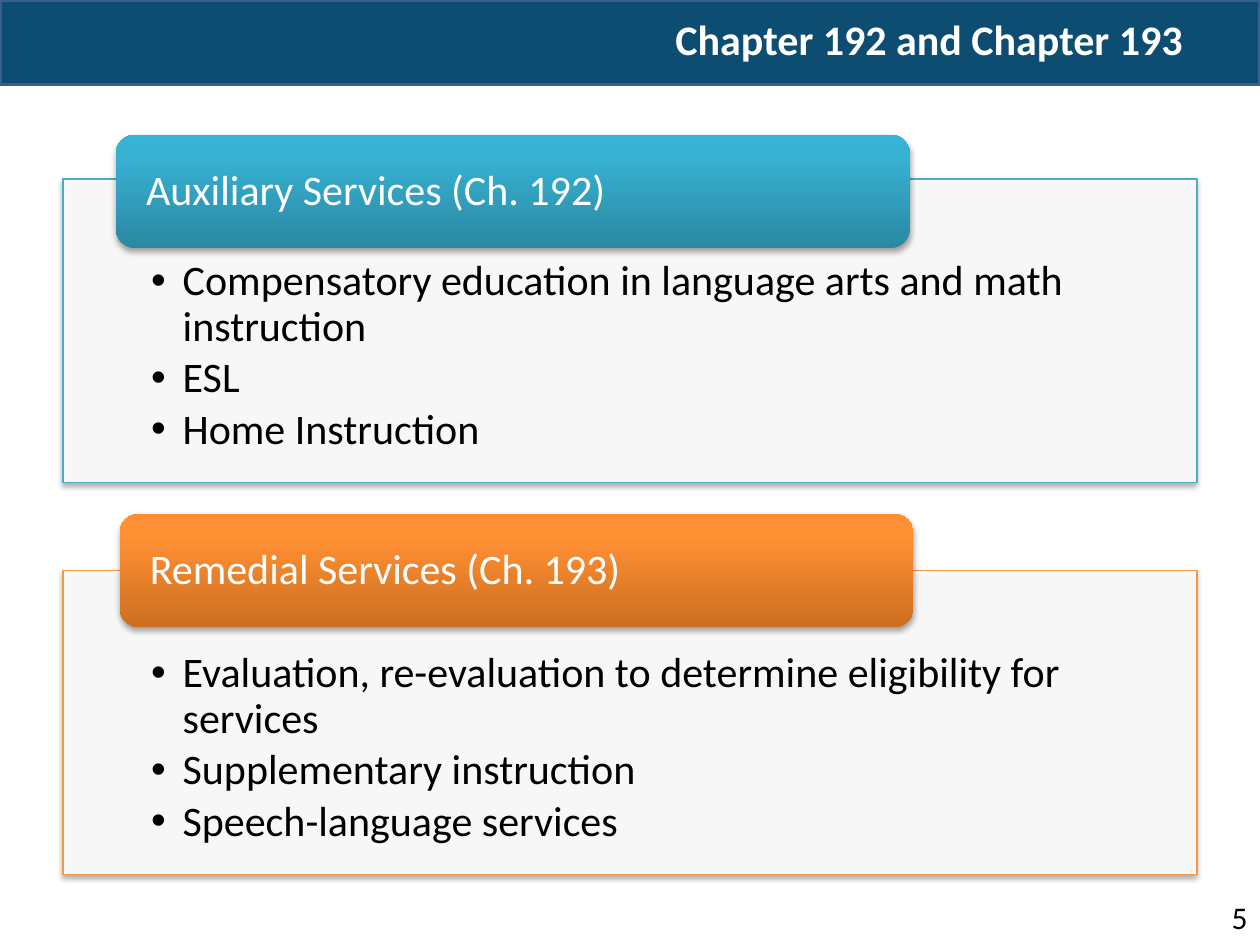
from dataclasses import dataclass

from lxml.etree import SubElement
from pptx import Presentation
from pptx.dml.color import RGBColor
from pptx.enum.shapes import MSO_SHAPE as Kind
from pptx.enum.text import MSO_ANCHOR as Anchor, PP_ALIGN as Align
from pptx.oxml import parse_xml
from pptx.oxml.ns import nsdecls, qn
from pptx.shapes.autoshape import Shape
from pptx.slide import Slide
from pptx.text.text import TextFrame, _Paragraph as Para
from pptx.util import Inches, Pt

WIDE, HIGH = Inches(10), Inches(7.5)
FACE = "Calibri"
BLACK = RGBColor(0x00, 0x00, 0x00)
WHITE = RGBColor(0xFF, 0xFF, 0xFF)
NAVY = RGBColor(0x0E, 0x4D, 0x72)
EDGE = RGBColor(0x3A, 0x5F, 0x8C)
TEAL = RGBColor(0x4B, 0xAC, 0xC6)
TEALS = (RGBColor(0x2A, 0x88, 0xA2), RGBColor(0x37, 0xB1, 0xD2), RGBColor(0x34, 0xB4, 0xD6))
AMBER = RGBColor(0xF7, 0x96, 0x46)
AMBERS = (RGBColor(0xCC, 0x6E, 0x20), RGBColor(0xFF, 0x90, 0x34), RGBColor(0xFF, 0x91, 0x36))
STOPS = (0, 80, 100)


@dataclass(frozen=True)
class Box:
    """A place in percent of the slide's width and height."""
    left: float
    top: float
    wide: float
    high: float

    def emu(self) -> tuple[int, ...]:
        """Turn the shares into lengths."""
        pairs = zip((self.left, self.top, self.wide, self.high), (WIDE, HIGH, WIDE, HIGH))
        return tuple(round(share * full / 100) for share, full in pairs)


@dataclass(frozen=True)
class Group:
    """A heading tab over a panel of bullet points."""
    head: str
    items: tuple[str, ...]
    panel: Box
    tab: Box
    line: RGBColor
    shades: tuple[RGBColor, ...]


GROUPS = (
    Group("Auxiliary Services (Ch. 192)",
          ("Compensatory education in language arts and math instruction",
           "ESL", "Home Instruction"),
          Box(5, 18.93, 90, 32.13), Box(9.2, 14.27, 63, 12), TEAL, TEALS),
    Group("Remedial Services (Ch. 193)",
          ("Evaluation, re-evaluation to determine eligibility for services",
           "Supplementary instruction", "Speech-language services"),
          Box(5, 60.4, 90, 32.13), Box(9.5, 54.4, 63, 12), AMBER, AMBERS),
)


def block(slide: Slide, kind: Kind, box: Box) -> Shape:
    """Add a preset shape without a shadow."""
    shape = slide.shapes.add_shape(kind, *box.emu())
    shape.shadow.inherit = False
    return shape


def paint(shape: Shape, fill: RGBColor, line: RGBColor, width: float) -> None:
    """Give a shape a solid fill and an outline."""
    shape.fill.solid()
    shape.fill.fore_color.rgb = fill
    shape.line.color.rgb = line
    shape.line.width = Pt(width)


def shade(shape: Shape) -> None:
    """Drop a soft shadow below a shape."""
    effect = shape._element.spPr.find(qn("a:effectLst"))
    drop = SubElement(effect, qn("a:outerShdw"), blurRad=str(Pt(3.1)),
                      dist=str(Pt(1.8)), dir="5400000", rotWithShape="0")
    tint = SubElement(drop, qn("a:srgbClr"), val=str(BLACK))
    SubElement(tint, qn("a:alpha"), val="35000")


def blend(shape: Shape, shades: tuple[RGBColor, ...]) -> None:
    """Fill a shape with a gradient that runs upward."""
    stops = "".join(f'<a:gs pos="{pos * 1000}"><a:srgbClr val="{tint}"/></a:gs>'
                    for pos, tint in zip(STOPS, shades))
    shape.fill.background()
    old = shape._element.spPr.find(qn("a:noFill"))
    old.getparent().replace(old, parse_xml(
        f'<a:gradFill {nsdecls("a")} rotWithShape="1"><a:gsLst>{stops}</a:gsLst>'
        '<a:lin ang="16200000" scaled="0"/></a:gradFill>'))


def frame(slide: Slide, box: Box, pads: tuple[float, ...] = (0.1, 0.05, 0.1, 0.05),
          anchor: Anchor = Anchor.TOP) -> TextFrame:
    """Add a wrapping text box with its insets in inches."""
    text = slide.shapes.add_textbox(*box.emu()).text_frame
    text.word_wrap = True
    text.vertical_anchor = anchor
    text.margin_left, text.margin_top, text.margin_right, text.margin_bottom = map(Inches, pads)
    return text


def write(para: Para, words: str, tint: RGBColor, size: int = 24,
          align: Align = Align.LEFT, bold: bool = False) -> None:
    """Set the words and the font of a paragraph."""
    para.text = words
    para.alignment = align
    para.font.name, para.font.size = FACE, Pt(size)
    para.font.bold = bold
    para.font.color.rgb = tint


def dot(para: Para) -> None:
    """Give a paragraph a hanging bullet."""
    props = para._p.get_or_add_pPr()
    props.set("marL", str(Inches(0.25)))
    props.set("indent", str(-Inches(0.25)))
    SubElement(props, qn("a:buFont"), typeface="Arial")
    SubElement(props, qn("a:buChar"), char="•")


def draw(slide: Slide, group: Group) -> None:
    """Draw a panel, its points and its heading tab."""
    panel = block(slide, Kind.RECTANGLE, group.panel)
    paint(panel, WHITE, group.line, 0.75)
    tint = panel._element.spPr.find(qn("a:solidFill"))[0]
    SubElement(tint, qn("a:alpha"), val="90000")
    shade(panel)
    text = frame(slide, group.panel, (0.95 + 0.25 - 0.5, 0.64, 0.7, 0.19))
    text.margin_left = Inches(0.7)
    for spot, item in enumerate(group.items):
        para = text.add_paragraph() if spot else text.paragraphs[0]
        dot(para)
        para.line_spacing, para.space_after = 0.9, Pt(3.6)
        write(para, item, BLACK)
    tab = block(slide, Kind.ROUNDED_RECTANGLE, group.tab)
    blend(tab, group.shades)
    tab.line.fill.background()
    shade(tab)
    head = frame(slide, group.tab, (0.24, 0, 0.24, 0), Anchor.MIDDLE).paragraphs[0]
    head.line_spacing = 0.9
    write(head, group.head, WHITE)


def main() -> None:
    """Build the slide and save it."""
    deck = Presentation()
    deck.slide_width, deck.slide_height = WIDE, HIGH
    slide = deck.slides.add_slide(deck.slide_layouts[6])
    paint(block(slide, Kind.RECTANGLE, Box(0, 0, 100, 8.93)), NAVY, EDGE, 2)
    page = frame(slide, Box(93.3, 94.4, 6.7, 5.33))
    write(page.paragraphs[0], "5", BLACK, 18, Align.RIGHT)
    title = frame(slide, Box(47.5, 0, 52.5, 8.27), anchor=Anchor.MIDDLE)
    write(title.paragraphs[0], "Chapter 192 and Chapter 193", WHITE, 24, Align.CENTER, True)
    for group in GROUPS:
        draw(slide, group)
    deck.save("out.pptx")


if __name__ == "__main__":
    main()
